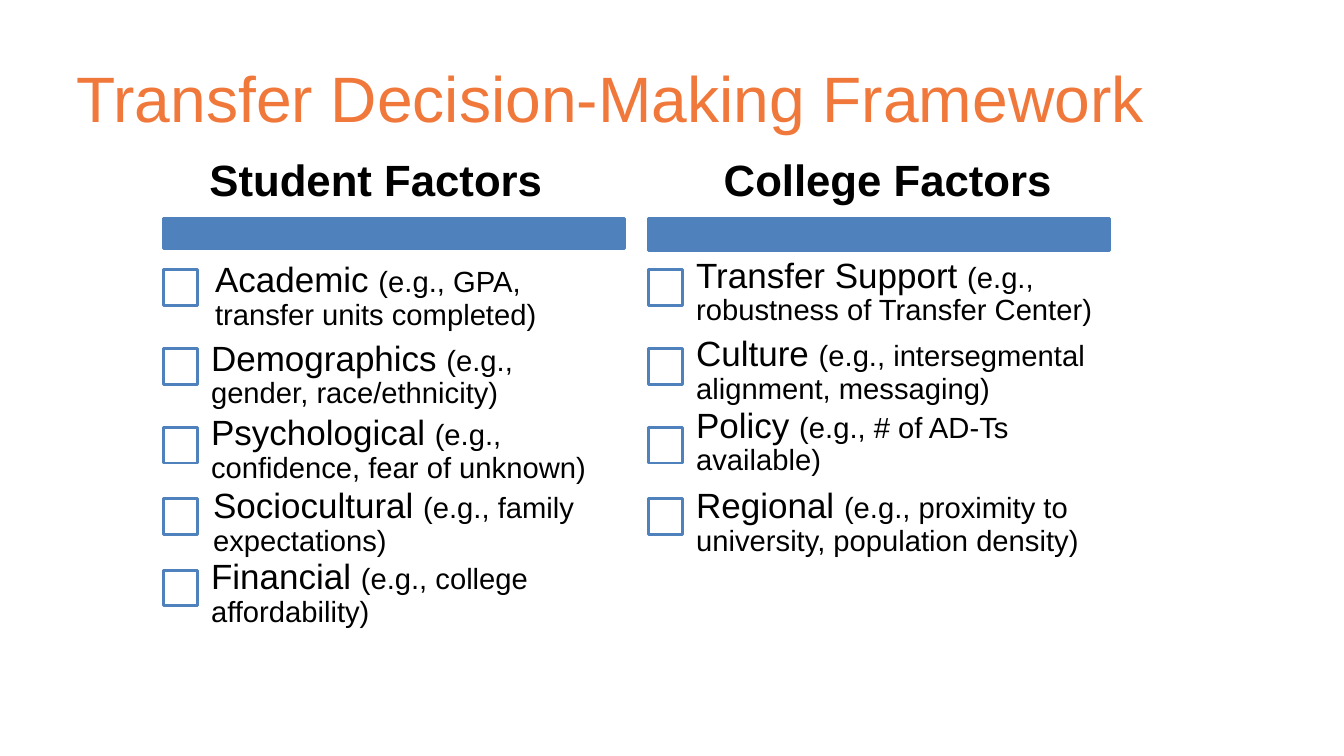
"""Build the Transfer Decision-Making Framework slide."""
from pptx import Presentation
from pptx.dml.color import RGBColor
from pptx.enum.shapes import MSO_SHAPE
from pptx.enum.text import MSO_ANCHOR, MSO_AUTO_SIZE, PP_ALIGN
from pptx.util import Inches, Pt

BLUE = RGBColor(0x4F, 0x81, 0xBD)
WHITE = RGBColor(0xFF, 0xFF, 0xFF)
BLACK = RGBColor(0x00, 0x00, 0x00)
ORANGE = RGBColor(0xF0, 0x78, 0x3B)
RECT = MSO_SHAPE.RECTANGLE
MIDDLE = MSO_ANCHOR.MIDDLE
NO_FIT = MSO_AUTO_SIZE.NONE
LEFT, CENTER = PP_ALIGN.LEFT, PP_ALIGN.CENTER

BOX_TOPS = [2.57, 3.32, 4.07, 4.75, 5.43]

# Each column: bar left, bar height, heading, heading box, factors
# Each factor: name, examples, text box (left, top, width, height), inset
COLUMNS = [
    (1.56, 0.29, "Student Factors", (1.07, 1.25, 5.02, 0.98), [
        ("Academic ", "(e.g., GPA, transfer units completed)",
         (1.95, 2.43, 4.09, 0.79), 0.1),
        ("Demographics ", "(e.g., gender, race/ethnicity)",
         (1.88, 3.18, 4.09, 0.79), 0.13),
        ("Psychological ", "(e.g., confidence, fear of unknown)",
         (1.88, 3.89, 4.09, 0.79), 0.13),
        ("Sociocultural ", "(e.g., family expectations)",
         (1.85, 4.46, 4.26, 1.04), 0.18),
        ("Financial ", "(e.g., college affordability)",
         (1.83, 5.36, 3.85, 0.59), 0.18),
    ]),
    (6.18, 0.31, "College Factors", (6.26, 1.25, 4.39, 0.98), [
        ("Transfer Support ", "(e.g., robustness of Transfer Center)",
         (6.5, 2.39, 4.09, 0.79), 0.13),
        ("Culture ", "(e.g., intersegmental alignment, messaging)",
         (6.5, 3.14, 4.09, 0.79), 0.13),
        ("Policy ", "(e.g., # of AD-Ts available)",
         (6.5, 3.82, 4.09, 0.79), 0.13),
        ("Regional ", "(e.g., proximity to university, population density)",
         (6.45, 4.46, 4.85, 1.04), 0.18),
    ]),
]


def add_rect(place, fill):
    rect = slide.shapes.add_shape(RECT, *map(Inches, place))
    rect.shadow.inherit = False
    rect.fill.solid()
    rect.fill.fore_color.rgb = fill
    rect.line.color.rgb = BLUE
    rect.line.width = Pt(2)


def add_text(place, inset, align, runs):
    frame = slide.shapes.add_textbox(*map(Inches, place)).text_frame
    frame.word_wrap = True
    frame.auto_size = NO_FIT
    frame.vertical_anchor = MIDDLE
    frame.margin_left = frame.margin_right = Inches(inset)
    frame.margin_top = frame.margin_bottom = Inches(inset)
    para = frame.paragraphs[0]
    para.alignment = align
    para.line_spacing = 0.9
    for text, size, bold in runs:
        run = para.add_run()
        run.text = text
        run.font.name = "Arial"
        run.font.size = Pt(size)
        run.font.bold = bold
        run.font.color.rgb = BLACK


deck = Presentation()
deck.slide_width, deck.slide_height = Inches(12.8), Inches(7.2)
slide = deck.slides.add_slide(deck.slide_layouts[5])

title = slide.shapes.title
title.left, title.top = Inches(0.63), Inches(0.32)
title.width, title.height = Inches(10.77), Inches(1.2)
title.text_frame.vertical_anchor = MIDDLE
title.text_frame.auto_size = NO_FIT
para = title.text_frame.paragraphs[0]
para.alignment = LEFT
run = para.add_run()
run.text = "Transfer Decision-Making Framework"
run.font.name = "Arial"
run.font.size = Pt(44)
run.font.color.rgb = ORANGE

for left, height, heading, place, factors in COLUMNS:
    add_rect((left, 2.08, 4.39, height), BLUE)
    add_text(place, 0.03, CENTER, [(heading, 30, True)])
    for top, (name, sample, spot, inset) in zip(BOX_TOPS, factors):
        add_rect((left, top, 0.32, 0.34), WHITE)
        add_text(spot, inset, LEFT, [(name, 24, False), (sample, 20, False)])

deck.save("out.pptx")
